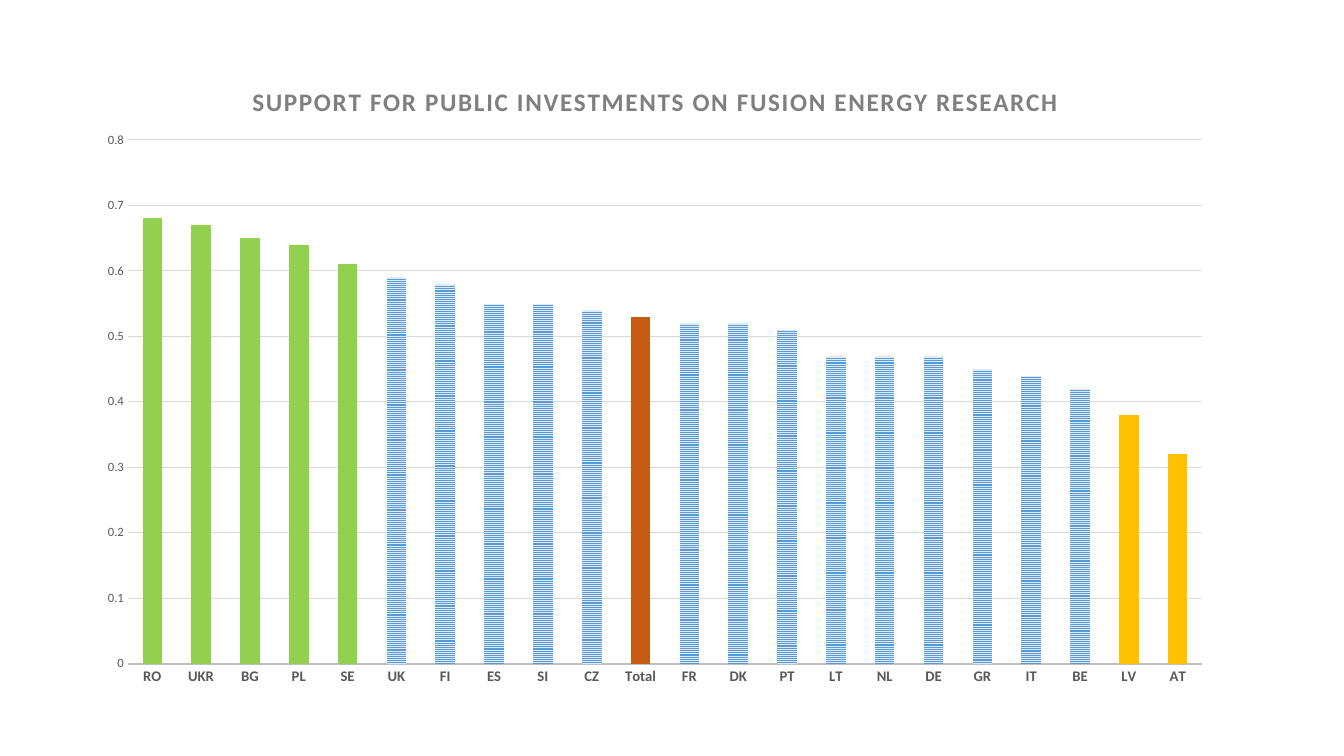
import pptx
import pptx.chart.data
import pptx.dml.color
import pptx.enum.chart
import pptx.enum.dml
import pptx.oxml
import pptx.oxml.ns
import pptx.util

THEME = {
    "font": "Calibri",
    "title": "7F7F7F", "label": "595959", "axis": "BFBFBF", "grid": "D9D9D9",
    "high": "92D050", "total": "C55A11", "low": "FFC000",
    "stripe": "5B9BD5", "stripe_back": "DEEBF7",
    "title_size": 18, "country_size": 10.5, "value_size": 9,
}
SUPPORT = {
    "RO": 0.68, "UKR": 0.67, "BG": 0.65, "PL": 0.64, "SE": 0.61, "UK": 0.59,
    "FI": 0.58, "ES": 0.55, "SI": 0.55, "CZ": 0.54, "Total": 0.53, "FR": 0.52,
    "DK": 0.52, "PT": 0.51, "LT": 0.47, "NL": 0.47, "DE": 0.47, "GR": 0.45,
    "IT": 0.44, "BE": 0.42, "LV": 0.38, "AT": 0.32,
}
HIGH_LIMIT, LOW_LIMIT = 0.6, 0.4


def color(name):
    return pptx.dml.color.RGBColor.from_string(THEME[name])


def write_title(chart, text, size, ink, bold=True, spacing=0):
    """Set the chart title; spacing is in hundredths of a point."""
    span = chart.chart_title.text_frame.paragraphs[0].add_run()
    span.text = text
    span.font.name = THEME["font"]
    span.font.size = pptx.util.Pt(size)
    span.font.bold = bold
    span.font.color.rgb = color(ink)
    span.font._element.set("spc", str(spacing))


deck = pptx.Presentation()
deck.slide_width = pptx.util.Inches(13.33)
deck.slide_height = pptx.util.Inches(7.5)
page = deck.slides.add_slide(deck.slide_layouts[6])

# Chart
data = pptx.chart.data.CategoryChartData()
data.categories = list(SUPPORT)
data.add_series("Series 1", list(SUPPORT.values()))
chart = page.shapes.add_chart(
    pptx.enum.chart.XL_CHART_TYPE.COLUMN_CLUSTERED,
    pptx.util.Inches(0.85), pptx.util.Inches(0.61),
    pptx.util.Inches(11.3), pptx.util.Inches(6.33), data).chart
chart.has_legend = False
chart.font.name = THEME["font"]
chart.font.size = pptx.util.Pt(10)
write_title(chart, "SUPPORT FOR PUBLIC INVESTMENTS ON FUSION ENERGY RESEARCH",
            THEME["title_size"], "title", spacing=120)
chart.chart_title.include_in_layout = False

# Plot area, as shares of the chart
layout = pptx.oxml.parse_xml(
    f'<c:layout {pptx.oxml.ns.nsdecls("c")}><c:manualLayout>'
    '<c:layoutTarget val="inner"/><c:xMode val="edge"/><c:yMode val="edge"/>'
    '<c:x val="0.037"/><c:y val="0.123"/><c:w val="0.943"/><c:h val="0.821"/>'
    '</c:manualLayout></c:layout>')
plot_area = chart._chartSpace.chart.plotArea
for old_layout in plot_area.findall(pptx.oxml.ns.qn("c:layout")):
    plot_area.remove(old_layout)
plot_area.insert(0, layout)

# Axes
countries, shares = chart.category_axis, chart.value_axis
for axis, size, bold in ((countries, THEME["country_size"], True),
                         (shares, THEME["value_size"], False)):
    axis.major_tick_mark = pptx.enum.chart.XL_TICK_MARK.NONE
    axis.minor_tick_mark = pptx.enum.chart.XL_TICK_MARK.NONE
    font = axis.tick_labels.font
    font.name = THEME["font"]
    font.size = pptx.util.Pt(size)
    font.bold = bold
    font.color.rgb = color("label")
countries.format.line.color.rgb = color("axis")
countries.format.line.width = pptx.util.Pt(1.5)
shares.format.line.fill.background()
shares.minimum_scale, shares.maximum_scale, shares.major_unit = 0, 0.8, 0.1
shares.tick_labels.number_format = "General"
shares.tick_labels.number_format_is_linked = False
shares.has_major_gridlines = True
shares.major_gridlines.format.line.color.rgb = color("grid")
shares.major_gridlines.format.line.width = pptx.util.Pt(0.75)

# Columns: striped in the middle, solid at both ends and for the total
plot = chart.plots[0]
plot.gap_width = 150
plot.vary_by_categories = False
columns = plot.series[0]
columns.invert_if_negative = False
stripes = columns.format.fill
stripes.patterned()
stripes.pattern = pptx.enum.dml.MSO_PATTERN.NARROW_HORIZONTAL
stripes.fore_color.rgb = color("stripe")
stripes.back_color.rgb = color("stripe_back")
for index, (country, share) in enumerate(SUPPORT.items()):
    if country == "Total":
        group = "total"
    elif share > HIGH_LIMIT:
        group = "high"
    elif share < LOW_LIMIT:
        group = "low"
    else:
        continue
    fill = columns.points[index].format.fill
    fill.solid()
    fill.fore_color.rgb = color(group)

deck.save("out.pptx")
